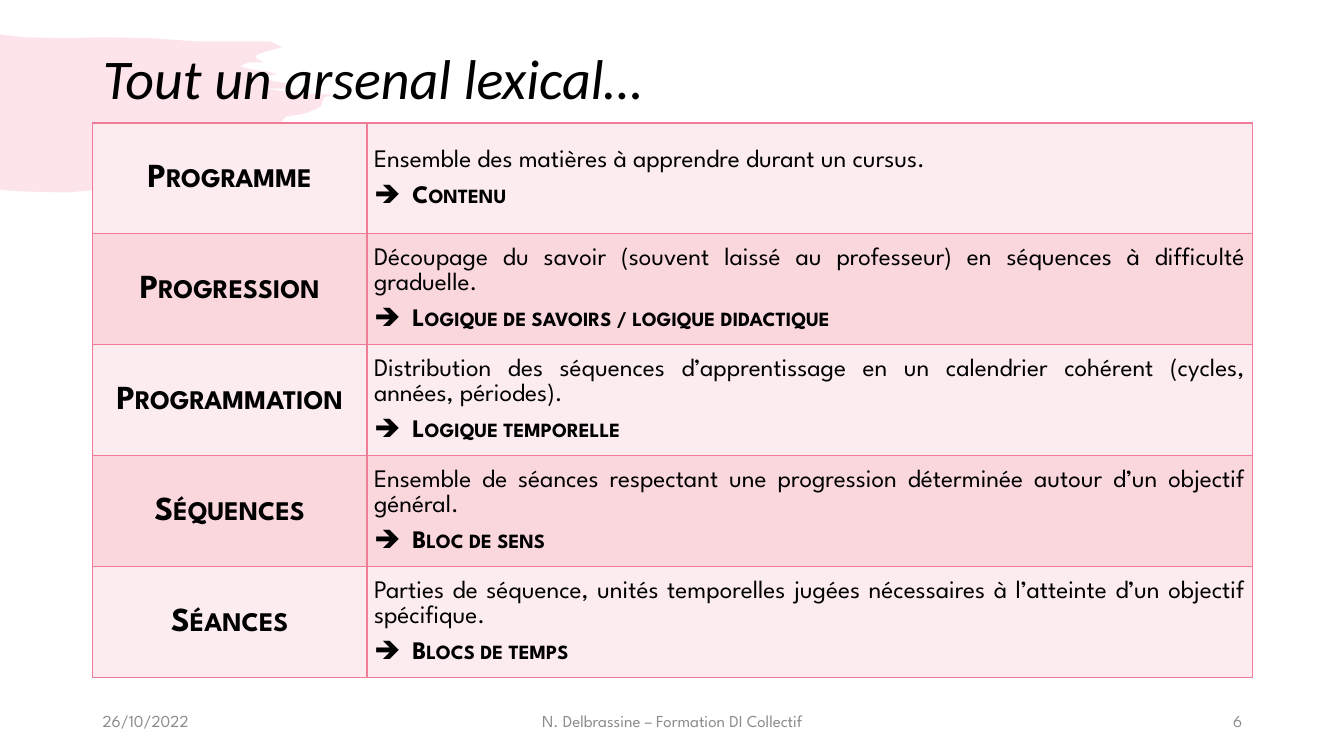
from lxml.etree import SubElement as Sub
from pptx import Presentation
from pptx.dml.color import RGBColor
from pptx.enum.text import MSO_ANCHOR as Anchor, PP_ALIGN as Align
from pptx.oxml.ns import qn
from pptx.util import Pt

PX = 9144  # 100 px to the inch
FONT = "League Spartan"
PINK, BLACK, GREY = "F07C98", "000000", "8C8C8C"
BANDS = ["FCECEF", "F9D7DD"]
LEFT, WIDTH = 92, 1150
COLS = [272, 878]
ROW = 110

TERMS = [
    ("Programme", "Ensemble des matières à apprendre durant un cursus.", "Contenu"),
    ("Progression",
     "Découpage du savoir (souvent laissé au professeur) en séquences à difficulté graduelle.",
     "Logique de savoirs / logique didactique"),
    ("Programmation",
     "Distribution des séquences d’apprentissage en un calendrier cohérent (cycles, années, périodes).",
     "Logique temporelle"),
    ("Séquences",
     "Ensemble de séances respectant une progression déterminée autour d’un objectif général.",
     "Bloc de sens"),
    ("Séances",
     "Parties de séquence, unités temporelles jugées nécessaires à l’atteinte d’un objectif spécifique.",
     "Blocs de temps"),
]

FOOT = [
    (92, 300, "26/10/2022", Align.LEFT),
    (442, 450, "N. Delbrassine – Formation DI Collectif", Align.CENTER),
    (942, 300, "6", Align.RIGHT),
]

BRUSH = [
    (0, 34), (6, 35), (25, 37), (66, 38), (102, 37), (151, 38), (194, 41),
    (248, 41), (268, 41), (280, 47), (271, 49), (255, 54), (253, 57), (256, 59),
    (262, 62), (246, 62), (238, 66), (246, 68), (256, 70), (266, 71), (275, 74),
    (251, 75), (263, 78), (273, 81), (280, 82), (288, 83), (290, 85), (287, 88),
    (284, 88), (263, 88), (290, 92), (330, 94), (321, 97), (318, 106), (307, 111),
    (300, 113), (283, 116), (280, 120), (278, 125), (274, 128), (308, 128),
    (269, 138), (273, 142), (252, 148), (263, 148), (238, 160), (197, 172),
    (150, 181), (102, 188), (65, 191), (23, 190), (7, 189), (0, 188),
]


def rgb(code):
    return RGBColor.from_string(code)


def place(shape, *box):
    shape.left, shape.top, shape.width, shape.height = [n * PX for n in box]


def style(para, size, color=BLACK, font=FONT, bold=False, italic=False, caps=False):
    for run in para.runs:
        face = run.font
        face.name, face.size = font, Pt(size)
        face.bold, face.italic = bold, italic
        face.color.rgb = rgb(color)
        if caps:
            run._r.get_or_add_rPr().set("cap", "small")


def space(para, align):
    para.alignment = align
    para.line_spacing = 1.07
    para.space_after = Pt(8)


def arrow(para):
    """Give the paragraph an arrow bullet with a hanging indent."""
    props = para._p.get_or_add_pPr()
    props.set("marL", str(38 * PX))
    props.set("indent", str(-38 * PX))
    Sub(props, qn("a:buChar"), char="➔")


def border(cell):
    props = cell._tc.get_or_add_tcPr()
    for pos, side in enumerate(["lnL", "lnR", "lnT", "lnB"]):
        line = Sub(props, qn("a:" + side), w=str(Pt(1)))
        fill = Sub(line, qn("a:solidFill"))
        Sub(fill, qn("a:srgbClr"), val=PINK)
        props.insert(pos, line)


def dress(cell, band):
    cell.fill.solid()
    cell.fill.fore_color.rgb = rgb(band)
    border(cell)
    cell.vertical_anchor = Anchor.MIDDLE
    cell.margin_left = cell.margin_right = 7 * PX
    cell.margin_top = cell.margin_bottom = 0


def add_brush(slide):
    pen = slide.shapes.build_freeform(*BRUSH[0], scale=PX)
    pen.add_line_segments(BRUSH[1:], close=True)
    shape = pen.convert_to_shape()
    shape.shadow.inherit = False
    shape.line.fill.background()
    shape.fill.solid()
    shape.fill.fore_color.rgb = rgb(PINK)
    tint = shape._element.spPr.find(qn("a:solidFill"))[0]
    Sub(tint, qn("a:alpha"), val="20000")


def add_title(slide, text):
    title = slide.shapes.title
    place(title, LEFT, 40, WIDTH, 82)
    frame = title.text_frame
    frame.text = text
    frame.vertical_anchor = Anchor.MIDDLE
    para = frame.paragraphs[0]
    para.alignment = Align.LEFT
    para.line_spacing = 0.9
    style(para, 40, font="Calibri", italic=True)


def add_terms(slide):
    box = [n * PX for n in (LEFT, 122, WIDTH, ROW * len(TERMS))]
    table = slide.shapes.add_table(len(TERMS), len(COLS), *box).table
    table.first_row = table.horz_banding = False
    for col, width in zip(table.columns, COLS):
        col.width = width * PX
    for i, (term, sense, gist) in enumerate(TERMS):
        table.rows[i].height = ROW * PX
        name, body = table.cell(i, 0), table.cell(i, 1)
        for cell in (name, body):
            dress(cell, BANDS[i % 2])
        name.text_frame.text = term
        head = name.text_frame.paragraphs[0]
        space(head, Align.CENTER)
        style(head, 24, bold=True, caps=True)
        body.text_frame.text = sense + "\n" + gist
        first, last = body.text_frame.paragraphs
        for para in (first, last):
            space(para, Align.JUSTIFY)
        style(first, 18)
        style(last, 18, bold=True, caps=True)
        arrow(last)


def add_foot(slide, left, width, text, align):
    box = [n * PX for n in (left, 695, width, 40)]
    frame = slide.shapes.add_textbox(*box).text_frame
    frame.word_wrap = True
    frame.vertical_anchor = Anchor.MIDDLE
    frame.text = text
    para = frame.paragraphs[0]
    para.alignment = align
    style(para, 12, GREY)


def main():
    deck = Presentation()
    deck.slide_width, deck.slide_height = 1333 * PX, 750 * PX
    slide = deck.slides.add_slide(deck.slide_layouts[5])
    add_brush(slide)
    add_title(slide, "Tout un arsenal lexical…")
    # The title lies over the brush stroke
    tree = slide.shapes._spTree
    tree.append(slide.shapes.title._element)
    add_terms(slide)
    for item in FOOT:
        add_foot(slide, *item)
    deck.save("out.pptx")


if __name__ == "__main__":
    main()
